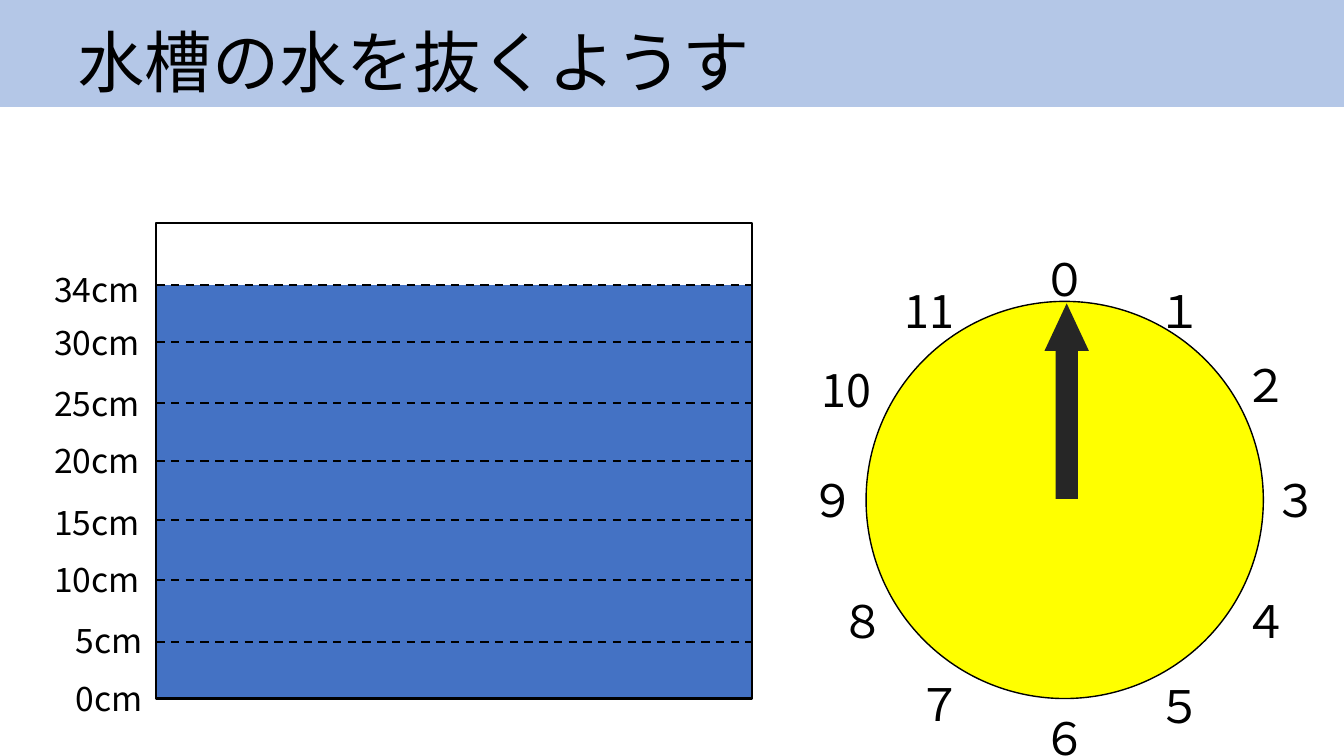
"""Build a slide showing a tank being drained beside a clock."""
import pptx
import pptx.util
import pptx.dml.color
import pptx.enum.dml
import pptx.enum.shapes
import pptx.enum.text
import pptx.oxml.ns
import lxml.etree

Inches = pptx.util.Inches
Pt = pptx.util.Pt
RGBColor = pptx.dml.color.RGBColor
KIND = pptx.enum.shapes.MSO_SHAPE
ALIGN = pptx.enum.text.PP_ALIGN
ANCHOR = pptx.enum.text.MSO_ANCHOR

BLACK = RGBColor(0x00, 0x00, 0x00)
WATER = RGBColor(0x44, 0x72, 0xC4)
BANNER = RGBColor(0xB4, 0xC7, 0xE7)
YELLOW = RGBColor(0xFF, 0xFF, 0x00)
HAND = RGBColor(0x26, 0x26, 0x26)
FONT = "Noto Sans CJK JP"

TITLE = "水槽の水を抜くようす"
LEFT, TOP, WIDTH, BASE = 1.55, 2.21, 5.91, 6.93
LEVELS = [
    ("34cm", 2.83, 2.62),
    ("30cm", 3.39, 3.14),
    ("25cm", 4.0, 3.75),
    ("20cm", 4.57, 4.32),
    ("15cm", 5.16, 4.93),
    ("10cm", 5.75, 5.5),
    ("5cm", 6.37, 6.1),
    ("0cm", BASE, 6.68),
]
HOURS = [
    ("０", 10.24, 2.45),
    ("１", 11.38, 2.77),
    ("２", 12.23, 3.5),
    ("３", 12.53, 4.64),
    ("４", 12.23, 5.84),
    ("５", 11.38, 6.68),
    ("６", 10.24, 7.0),
    ("７", 9.0, 6.66),
    ("８", 8.24, 5.84),
    ("９", 7.94, 4.64),
    ("10", 8.05, 3.55),
    ("11", 8.87, 2.77),
]


def add_shape(slide, kind, box, fill=None, line=0):
    shape = slide.shapes.add_shape(kind, *map(Inches, box))
    shape.shadow.inherit = False
    if fill is None:
        shape.fill.background()
    else:
        shape.fill.solid()
        shape.fill.fore_color.rgb = fill
    if line:
        shape.line.color.rgb = BLACK
        shape.line.width = Pt(line)
    else:
        shape.line.fill.background()
    return shape


def set_text(shape, text, size):
    frame = shape.text_frame
    frame.text = text
    line = frame.paragraphs[0]
    line.alignment = ALIGN.LEFT
    font = line.runs[0].font
    font.size = Pt(size)
    font.name = FONT
    font.color.rgb = BLACK
    east = lxml.etree.SubElement(font._element, pptx.oxml.ns.qn("a:ea"))
    east.set("typeface", FONT)
    return frame


def add_label(slide, text, box, size):
    label = slide.shapes.add_textbox(*map(Inches, box))
    frame = set_text(label, text, size)
    frame.word_wrap = False
    frame.auto_size = pptx.enum.text.MSO_AUTO_SIZE.SHAPE_TO_FIT_TEXT


def add_dash(slide, y):
    dash = slide.shapes.add_connector(
        pptx.enum.shapes.MSO_CONNECTOR.STRAIGHT,
        Inches(LEFT), Inches(y), Inches(LEFT + WIDTH), Inches(y))
    dash.line.color.rgb = BLACK
    dash.line.width = Pt(1.5)
    dash.line.dash_style = pptx.enum.dml.MSO_LINE.DASH
    props = dash._element.spPr
    lxml.etree.SubElement(props, pptx.oxml.ns.qn("a:effectLst"))


def add_title(slide):
    banner = add_shape(slide, KIND.RECTANGLE, (0, 0, 13.33, 1.06), BANNER)
    frame = set_text(banner, TITLE, 48)
    frame.word_wrap = True
    frame.margin_left = Inches(0.77)
    frame.vertical_anchor = ANCHOR.BOTTOM
    frame.paragraphs[0].line_spacing = 0.9


def add_tank(slide):
    brim = LEVELS[0][1]
    add_shape(slide, KIND.RECTANGLE, (LEFT, brim, WIDTH, BASE - brim), WATER)
    add_shape(slide, KIND.RECTANGLE, (LEFT, TOP, WIDTH, BASE - TOP), line=1.5)
    for text, y, top in LEVELS:
        if y < BASE:
            add_dash(slide, y)
        wide = 1.11 if len(text) == 4 else 0.9
        add_label(slide, text, (LEFT - wide, top, wide, 0.5), 24)


def add_clock(slide):
    add_shape(slide, KIND.OVAL, (8.59, 2.99, 3.94, 3.94), YELLOW, 1)
    hand = add_shape(slide, KIND.UP_ARROW, (10.36, 3.01, 0.44, 1.94), HAND)
    hand.adjustments[0] = 0.5
    hand.adjustments[1] = 1.07
    for text, x, y in HOURS:
        wide = 0.76 if len(text) == 2 else 0.65
        add_label(slide, text, (x, y, wide, 0.64), 32)


def main():
    deck = pptx.Presentation()
    deck.slide_width = Inches(13.33)
    deck.slide_height = Inches(7.5)
    slide = deck.slides.add_slide(deck.slide_layouts[6])
    add_title(slide)
    add_tank(slide)
    add_clock(slide)
    deck.save("out.pptx")


if __name__ == "__main__":
    main()
